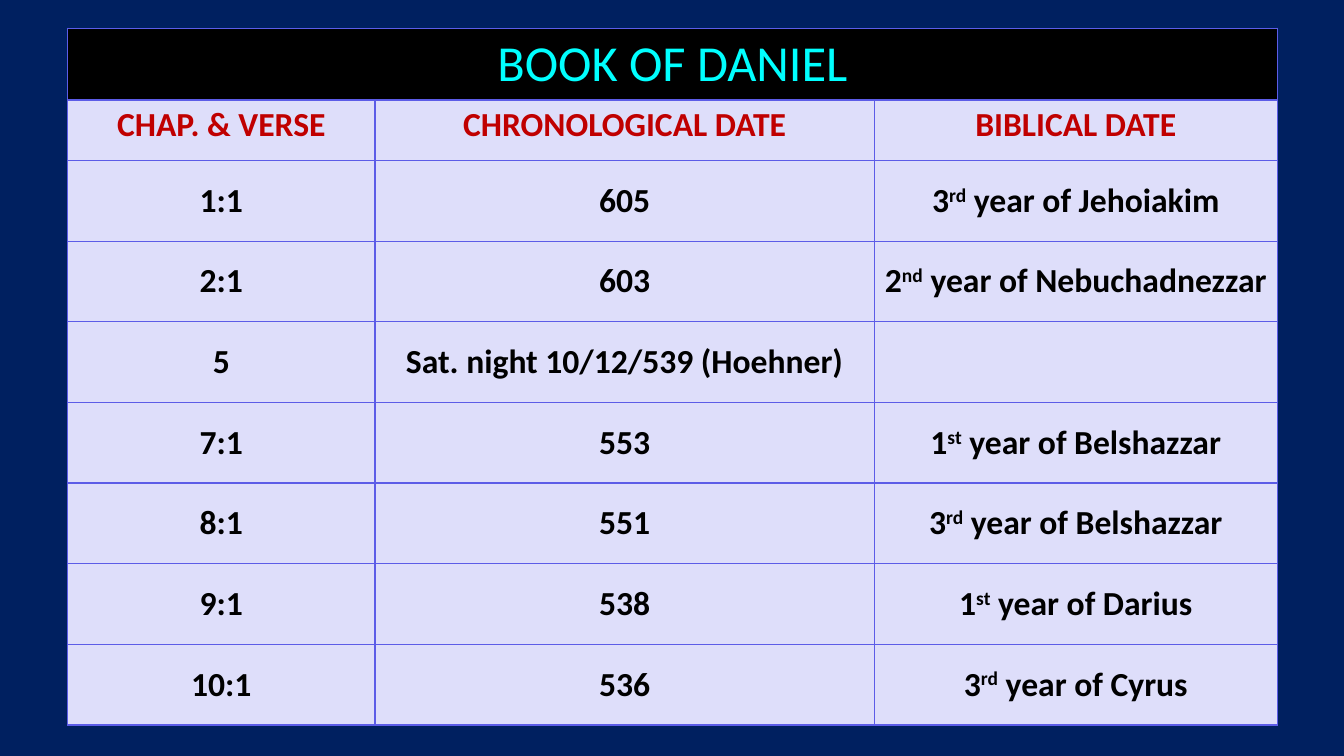
from lxml import etree
from pptx import Presentation
from pptx.dml.color import RGBColor
from pptx.enum.text import MSO_ANCHOR, PP_ALIGN
from pptx.oxml.ns import qn
from pptx.util import Pt

PX = 9144  # 100 px to the inch
CENTER = PP_ALIGN.CENTER
TOP, MIDDLE = MSO_ANCHOR.TOP, MSO_ANCHOR.MIDDLE
FONT = "Calibri"

NAVY, BLACK, CYAN, RED = "002060", "000000", "00FFFF", "C00000"
LAVENDER, GRID_BLUE = "DEDEFA", "5C5CE7"

TITLE = "BOOK OF DANIEL"
HEADINGS = ["CHAP. & VERSE", "CHRONOLOGICAL DATE", "BIBLICAL DATE"]
# Chapter and verse, chronological date, (year, ordinal ending, rest)
DATES = [
    ("1:1", "605", ("3", "rd", " year of Jehoiakim")),
    ("2:1", "603", ("2", "nd", " year of Nebuchadnezzar")),
    ("5", "Sat. night 10/12/539 (Hoehner)", ()),
    ("7:1", "553", ("1", "st", " year of Belshazzar")),
    ("8:1", "551", ("3", "rd", " year of Belshazzar")),
    ("9:1", "538", ("1", "st", " year of Darius")),
    ("10:1", "536", ("3", "rd", " year of Cyrus")),
]
COLUMN_WIDTHS = [305, 495, 400]
ROW_HEIGHTS = [71, 60] + [80] * len(DATES)


def px(length):
    return length * PX


def rgb(color):
    return RGBColor.from_string(color)


def add_borders(cell):
    properties = cell._tc.get_or_add_tcPr()
    for side in ("lnL", "lnR", "lnT", "lnB"):
        line = etree.SubElement(properties, qn(f"a:{side}"), w=str(Pt(1)))
        fill = etree.SubElement(line, qn("a:solidFill"))
        etree.SubElement(fill, qn("a:srgbClr"), val=GRID_BLUE)


def fill_cell(cell, parts, color, background=LAVENDER, size=24, bold=True, anchor=MIDDLE):
    """Write the parts as runs, raising the second one."""
    add_borders(cell)
    cell.fill.solid()
    cell.fill.fore_color.rgb = rgb(background)
    cell.vertical_anchor = anchor
    paragraph = cell.text_frame.paragraphs[0]
    paragraph.alignment = CENTER
    for index, part in enumerate(parts):
        run = paragraph.add_run()
        run.text = part
        run.font.name = FONT
        run.font.size = Pt(size)
        run.font.bold = bold
        run.font.color.rgb = rgb(color)
        if index == 1:
            run._r.get_or_add_rPr().set("baseline", "30000")


def add_dates_table(slide, left, top):
    table = slide.shapes.add_table(
        len(ROW_HEIGHTS), len(COLUMN_WIDTHS), px(left), px(top),
        px(sum(COLUMN_WIDTHS)), px(sum(ROW_HEIGHTS))).table
    table.first_row = table.horz_banding = False
    for column, width in zip(table.columns, COLUMN_WIDTHS):
        column.width = px(width)
    for row, height in zip(table.rows, ROW_HEIGHTS):
        row.height = px(height)

    table.cell(0, 0).merge(table.cell(0, len(COLUMN_WIDTHS) - 1))
    for column in range(len(COLUMN_WIDTHS)):
        fill_cell(table.cell(0, column), [] if column else [TITLE], CYAN,
                  background=BLACK, size=36, bold=False, anchor=TOP)
    for column, heading in enumerate(HEADINGS):
        fill_cell(table.cell(1, column), [heading], RED, anchor=TOP)
    for row, (verse, chronological, biblical) in enumerate(DATES, start=2):
        for column, parts in enumerate(([verse], [chronological], biblical)):
            fill_cell(table.cell(row, column), parts, BLACK)


def main():
    presentation = Presentation()
    presentation.slide_width, presentation.slide_height = px(1333), px(750)
    slide = presentation.slides.add_slide(presentation.slide_layouts[6])
    slide.background.fill.solid()
    slide.background.fill.fore_color.rgb = rgb(NAVY)
    add_dates_table(slide, 67, 28)
    presentation.save("out.pptx")


if __name__ == "__main__":
    main()
